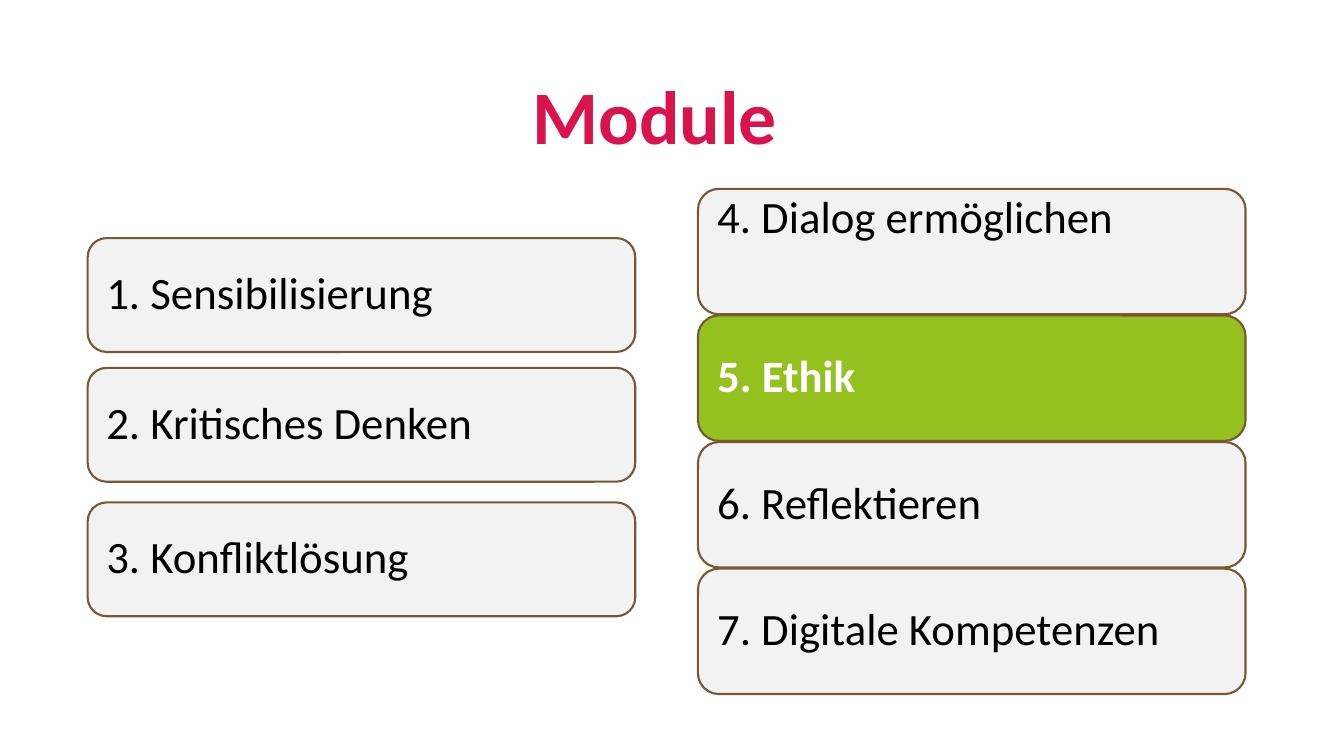
from pptx import Presentation
from pptx.dml.color import RGBColor
from pptx.enum.shapes import MSO_SHAPE as Shape
from pptx.enum.text import MSO_ANCHOR as Anchor, MSO_AUTO_SIZE as AutoSize, PP_ALIGN as Align
from pptx.util import Cm, Pt

COLORS = {
    "title": "D8134D",
    "card": "F2F2F2",
    "active": "95C11F",
    "border": "785832",
    "text": "000000",
    "active_text": "FFFFFF",
}
ACTIVE_MODULE = "5. Ethik"
RAISED_MODULE = "4. Dialog ermöglichen"
LEFT_MODULES = ["1. Sensibilisierung", "2. Kritisches Denken", "3. Konfliktlösung"]
RIGHT_MODULES = [RAISED_MODULE, ACTIVE_MODULE, "6. Reflektieren", "7. Digitale Kompetenzen"]


def color(name):
    return RGBColor.from_string(COLORS[name])


def style_text(para, text, size, color_name, bold, align):
    para.text = text
    para.alignment = align
    para.line_spacing = 0.9
    para.font.name = "Calibri"
    para.font.size = Pt(size)
    para.font.bold = bold
    para.font.color.rgb = color(color_name)


def add_title(page, left, top, width, height):
    title = page.shapes.title
    title.left, title.top = Cm(left), Cm(top)
    title.width, title.height = Cm(width), Cm(height)
    frame = title.text_frame
    frame.auto_size = AutoSize.NONE
    frame.vertical_anchor = Anchor.BOTTOM
    style_text(frame.paragraphs[0], "Module", 54, "title", True, Align.CENTER)


def add_module(page, text, left, top, width, height):
    active = text == ACTIVE_MODULE
    raised = text == RAISED_MODULE
    box = page.shapes.add_shape(
        Shape.ROUNDED_RECTANGLE, Cm(left), Cm(top), Cm(width), Cm(height)
    )
    box.shadow.inherit = False
    box.fill.solid()
    box.fill.fore_color.rgb = color("active" if active else "card")
    box.line.color.rgb = color("border")
    box.line.width = Pt(1.5)
    frame = box.text_frame
    frame.word_wrap = True
    frame.margin_left = frame.margin_right = Cm(0.33)
    frame.margin_top = frame.margin_bottom = Cm(0 if raised else 0.33)
    frame.vertical_anchor = Anchor.TOP if raised else Anchor.MIDDLE
    text_color = "active_text" if active else "text"
    style_text(frame.paragraphs[0], text, 32, text_color, active, Align.LEFT)


def add_module_column(page, modules, left, tops, width, height):
    for text, top in zip(modules, tops):
        add_module(page, text, left, top, width, height)


def main():
    deck = Presentation()
    deck.slide_width, deck.slide_height = Cm(33.87), Cm(19.05)
    page = deck.slides.add_slide(deck.slide_layouts[5])
    add_title(page, 0.03, -0.76, 32.94, 4.95)
    add_module_column(page, LEFT_MODULES, 2.21, [6, 9.27, 12.66], 13.8, 2.87)
    right_tops = [4.76 + 3.19 * row for row in range(len(RIGHT_MODULES))]
    add_module_column(page, RIGHT_MODULES, 17.59, right_tops, 13.8, 3.16)
    deck.save("out.pptx")


if __name__ == "__main__":
    main()
